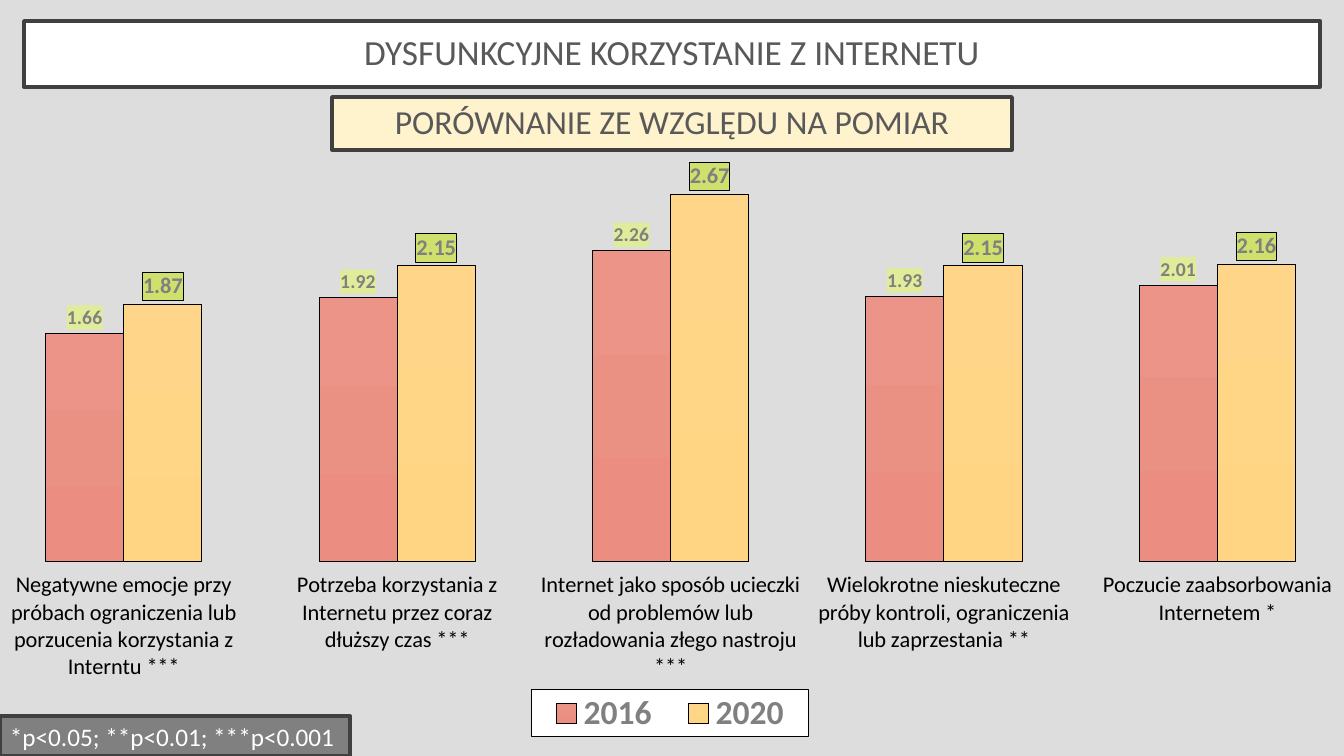
from lxml import etree
from pptx import Presentation
from pptx.chart.data import CategoryChartData
from pptx.dml.color import RGBColor
from pptx.enum.chart import XL_CHART_TYPE, XL_LABEL_POSITION, XL_LEGEND_POSITION, XL_TICK_MARK
from pptx.enum.shapes import MSO_SHAPE
from pptx.enum.text import MSO_ANCHOR, MSO_AUTO_SIZE, PP_ALIGN
from pptx.oxml import parse_xml
from pptx.oxml.ns import nsdecls, qn
from pptx.util import Pt

TITLE = "DYSFUNKCYJNE KORZYSTANIE Z INTERNETU"
SUBTITLE = "PORÓWNANIE ZE WZGLĘDU NA POMIAR"
SIGNIFICANCE = "*p<0.05; **p<0.01; ***p<0.001"
SYMPTOMS = [
    "Negatywne emocje przy próbach ograniczenia lub porzucenia korzystania z Interntu ***",
    "Potrzeba korzystania z Internetu przez coraz dłuższy czas ***",
    "Internet jako sposób ucieczki od problemów lub rozładowania złego nastroju ***",
    "Wielokrotne nieskuteczne próby kontroli, ograniczenia lub zaprzestania **",
    "Poczucie zaabsorbowania Internetem *",
]

BLACK = RGBColor(0x00, 0x00, 0x00)
WHITE = RGBColor(0xFF, 0xFF, 0xFF)
GRAY = RGBColor(0x80, 0x80, 0x80)
FRAME = RGBColor(0x40, 0x40, 0x40)
HEADING = RGBColor(0x59, 0x59, 0x59)
BACKGROUND = RGBColor(0xDD, 0xDD, 0xDD)
CREAM = RGBColor(0xFF, 0xF3, 0xCD)
CORAL = (RGBColor(0xEB, 0x94, 0x87), RGBColor(0xEB, 0x8E, 0x81))
AMBER = (RGBColor(0xFF, 0xD5, 0x89), RGBColor(0xFF, 0xD4, 0x83))
PALE_LIME = RGBColor(0xE1, 0xEC, 0x9B)
LIME = RGBColor(0xD0, 0xE0, 0x6C)

MEASUREMENTS = [
    ("2016", [1.66, 1.92, 2.26, 1.93, 2.01], CORAL, 14, PALE_LIME, None),
    ("2020", [1.87, 2.15, 2.67, 2.15, 2.16], AMBER, 16, LIME, BLACK),
]

FONT = "Calibri"
PX = 12192000 / 1344
CHART_BOX = (-42, 136, 1424, 620)
PLOT_BOX = (-13, 149, 1367, 413)
LEGEND_BOX = (531, 690, 278, 47)
NOTE_BOX = (0, 716, 350, 40)


def px(*lengths):
    return [round(length * PX) for length in lengths]


def style_font(font, size, color, bold=False):
    font.name = FONT
    font.size = Pt(size)
    font.color.rgb = color
    font.bold = bold


def style_frame(box, fill):
    box.fill.solid()
    box.fill.fore_color.rgb = fill
    box.line.color.rgb = FRAME
    box.line.width = Pt(2.5)


def write_heading(box, text, size):
    frame = box.text_frame
    frame.text = text
    frame.word_wrap = True
    frame.auto_size = MSO_AUTO_SIZE.NONE
    frame.vertical_anchor = MSO_ANCHOR.MIDDLE
    inset, = px(20)
    frame.margin_left = frame.margin_right = inset
    frame.margin_top = frame.margin_bottom = inset
    paragraph = frame.paragraphs[0]
    paragraph.alignment = PP_ALIGN.CENTER
    paragraph.line_spacing = 0.9
    style_font(paragraph.runs[0].font, size, HEADING)


def fill_behind_text(part, fill, border):
    outline = f'<a:solidFill><a:srgbClr val="{border}"/></a:solidFill>' if border is not None else "<a:noFill/>"
    part.find(qn("c:txPr")).addprevious(parse_xml(
        f'<c:spPr {nsdecls("c", "a")}><a:solidFill><a:srgbClr val="{fill}"/></a:solidFill>'
        f'<a:ln w="9525">{outline}</a:ln></c:spPr>'))


def place_part(part, box, index, inner=False):
    for old in part.findall(qn("c:layout")):
        part.remove(old)
    left, top, width, height = CHART_BOX
    shares = {"x": (box[0] - left) / width, "y": (box[1] - top) / height,
              "w": box[2] / width, "h": box[3] / height}
    layout = etree.Element(qn("c:layout"))
    manual = etree.SubElement(layout, qn("c:manualLayout"))
    settings = [("layoutTarget", "inner")] if inner else []
    settings += [("xMode", "edge"), ("yMode", "edge")]
    settings += [(name, f"{share:.4f}") for name, share in shares.items()]
    for name, value in settings:
        etree.SubElement(manual, qn(f"c:{name}")).set("val", value)
    part.insert(index, layout)


def add_comparison(slide):
    data = CategoryChartData(number_format="General")
    data.categories = SYMPTOMS
    for year, means, *_ in MEASUREMENTS:
        data.add_series(year, means)
    chart = slide.shapes.add_chart(XL_CHART_TYPE.COLUMN_CLUSTERED, *px(*CHART_BOX), data).chart
    style_font(chart.font, 10, BLACK)
    chart.has_title = False

    plot = chart.plots[0]
    plot.gap_width = 150
    plot.overlap = 0
    plot.vary_by_categories = False
    for series, (_, _, gradient, size, label_fill, border) in zip(plot.series, MEASUREMENTS):
        fill = series.format.fill
        fill.gradient()
        fill.gradient_angle = 270
        for stop, color in zip(fill.gradient_stops, gradient):
            stop.color.rgb = color
        series.format.line.color.rgb = BLACK
        series.format.line.width = Pt(0.75)
        labels = series.data_labels
        labels.show_value = True
        labels.number_format = "General"
        labels.number_format_is_linked = False
        labels.position = XL_LABEL_POSITION.OUTSIDE_END
        style_font(labels.font, size, GRAY, True)
        fill_behind_text(labels._element, label_fill, border)

    symptoms = chart.category_axis
    symptoms.major_tick_mark = XL_TICK_MARK.OUTSIDE
    symptoms.format.line.fill.background()
    style_font(symptoms.tick_labels.font, 16, BLACK)
    means = chart.value_axis
    means.minimum_scale = 0
    means.maximum_scale = 3
    means.has_major_gridlines = False
    means.visible = False

    chart.has_legend = True
    legend = chart.legend
    legend.position = XL_LEGEND_POSITION.BOTTOM
    legend.include_in_layout = False
    style_font(legend.font, 24, GRAY, True)
    fill_behind_text(legend._element, WHITE, BLACK)
    place_part(legend._element, LEGEND_BOX, 1)
    place_part(chart._chartSpace.find(".//" + qn("c:plotArea")), PLOT_BOX, 0, inner=True)


def add_frame(slide, box, fill):
    frame = slide.shapes.add_shape(MSO_SHAPE.RECTANGLE, *px(*box))
    frame.shadow.inherit = False
    style_frame(frame, fill)
    return frame


def main():
    deck = Presentation()
    deck.slide_width, deck.slide_height = px(1344, 756)
    slide = deck.slides.add_slide(deck.slide_layouts[5])
    slide.background.fill.solid()
    slide.background.fill.fore_color.rgb = BACKGROUND

    add_comparison(slide)

    title = slide.shapes.title
    title.left, title.top, title.width, title.height = px(24, 21, 1296, 66)
    style_frame(title, WHITE)
    write_heading(title, TITLE, 25.2)

    add_frame(slide, NOTE_BOX, GRAY)
    note = slide.shapes.add_textbox(*px(*NOTE_BOX)).text_frame
    note.word_wrap = False
    note.vertical_anchor = MSO_ANCHOR.MIDDLE
    note.margin_top = note.margin_bottom = 0
    note.text = SIGNIFICANCE
    style_font(note.paragraphs[0].runs[0].font, 18, WHITE)

    write_heading(add_frame(slide, (332, 97, 680, 53), CREAM), SUBTITLE, 24)
    deck.save("out.pptx")


if __name__ == "__main__":
    main()
